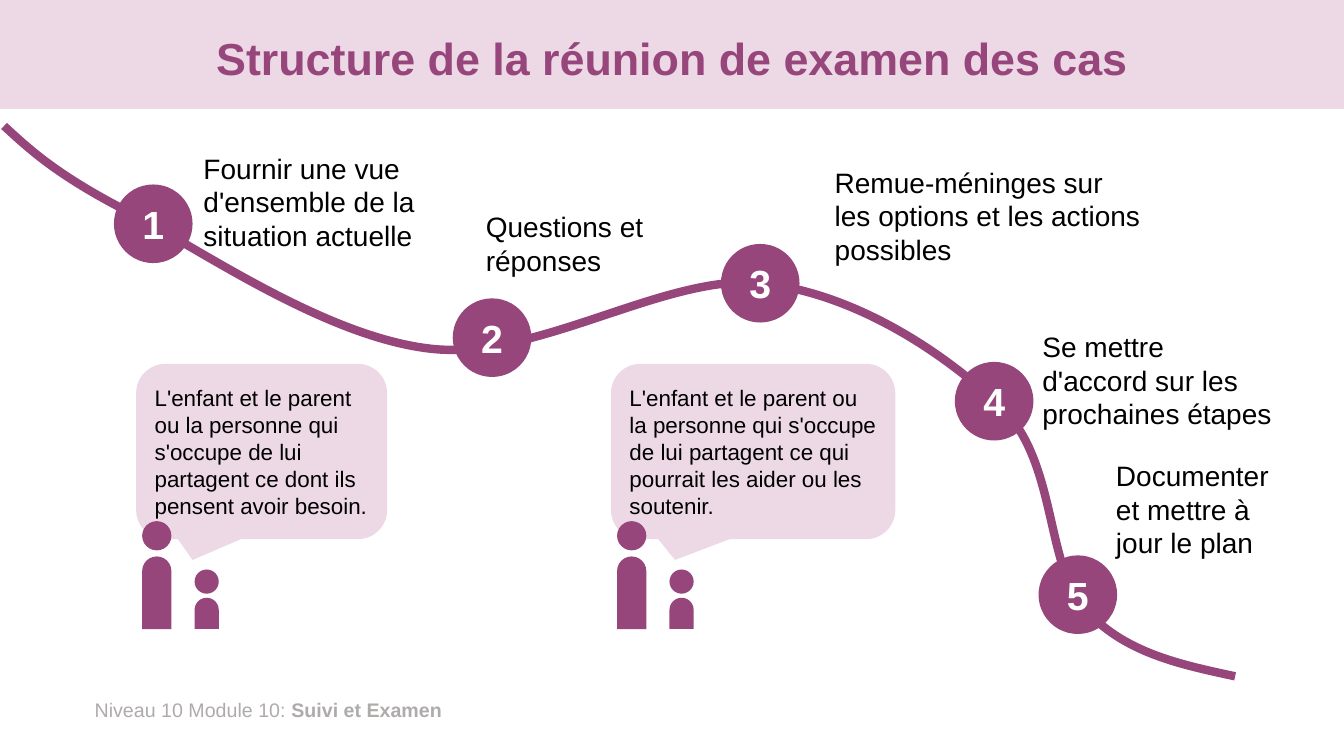
from pptx import Presentation
from pptx import util as u
from pptx.dml.color import RGBColor
from pptx.enum import shapes, text
from pptx.oxml.ns import qn

PX = 9144  # EMU per px, 100 px to the inch
PLUM = RGBColor(0x97, 0x46, 0x7C)
PINK = RGBColor(0xED, 0xD8, 0xE6)
GREY = RGBColor(0xAF, 0xAB, 0xAB)
BLACK = RGBColor(0, 0, 0)
WHITE = RGBColor(255, 255, 255)

SHAPE = shapes.MSO_SHAPE
LEFT, CENTER = text.PP_ALIGN.LEFT, text.PP_ALIGN.CENTER
MIDDLE = text.MSO_ANCHOR.MIDDLE

# Road: start point, then two control points and an end point per curve
ROAD = [(4, 125),
        (30, 149), (57, 174), (127, 210),
        (198, 247), (322, 334), (427, 346),
        (532, 358), (661, 271), (755, 281),
        (850, 291), (941, 353), (995, 406),
        (1048, 460), (1037, 559), (1075, 603),
        (1113, 647), (1169, 659), (1225, 671)]

# Steps: marker position, label box, label
MARKER = 78
STEPS = [
    ((113, 183), (192, 145, 286, 111),
     "Fournir une vue d'ensemble de la situation actuelle"),
    ((449, 296), (472, 203, 251, 77), "Questions et réponses"),
    ((715, 242), (818, 159, 325, 111),
     "Remue-méninges sur les options et les actions possibles"),
    ((947, 359), (1024, 322, 251, 111),
     "Se mettre d'accord sur les prochaines étapes"),
    ((1030, 551), (1097, 450, 186, 111),
     "Documenter et mettre à jour le plan"),
]

# Speech: left edge, width, words
SPEECH = [
    (135, 249, "L'enfant et le parent ou la personne qui s'occupe de lui "
               "partagent ce dont ils pensent avoir besoin."),
    (606, 282, "L'enfant et le parent ou la personne qui s'occupe de lui "
               "partagent ce qui pourrait les aider ou les soutenir."),
]


def emu(*lengths):
    return [length * PX for length in lengths]


def add_shape(parent, kind, box, fill, adjustments=()):
    sp = parent.shapes.add_shape(kind, *emu(*box))
    sp.shadow.inherit = False
    sp.fill.solid()
    sp.fill.fore_color.rgb = fill
    sp.line.fill.background()
    for i, value in enumerate(adjustments):
        sp.adjustments[i] = value
    return sp


def write(sp, words, size, color, bold=None, align=LEFT, anchor=None):
    tf = sp.text_frame
    tf.word_wrap = True
    if anchor is not None:
        tf.vertical_anchor = anchor
    p = tf.paragraphs[0]
    p.text = words
    p.alignment = align
    p.font.name = "Arial"
    p.font.size = u.Pt(size)
    p.font.bold = bold
    p.font.color.rgb = color
    return p


def add_label(s, box, words, size, color, **style):
    return write(s.shapes.add_textbox(*emu(*box)), words, size, color, **style)


def add_road(s, points):
    builder = s.shapes.build_freeform(*points[0], scale=PX)
    builder.add_line_segments(points[1:], close=False)
    sp = builder.convert_to_shape()
    sp.shadow.inherit = False
    sp.fill.background()
    sp.line.color.rgb = PLUM
    sp.line.width = u.Pt(6)
    # Turn each three line segments into one Bézier curve
    outline = sp._element.xpath(".//a:path")[0]
    segments = outline.findall(qn("a:lnTo"))
    for i in range(0, len(segments), 3):
        curve = outline.makeelement(qn("a:cubicBezTo"), {})
        segments[i].addprevious(curve)
        for segment in segments[i:i + 3]:
            curve.append(segment[0])
            outline.remove(segment)


def add_marker(s, position, number):
    sp = add_shape(s, SHAPE.OVAL, (*position, MARKER, MARKER), PLUM)
    write(sp, str(number), 28, WHITE, bold=True, align=CENTER, anchor=MIDDLE)


def add_person(group, x, y, width, body_top, body_height):
    add_shape(group, SHAPE.OVAL, (x, y, width, width), PLUM)
    add_shape(group, SHAPE.ROUND_2_SAME_RECTANGLE,
              (x, body_top, width, body_height), PLUM, (0.5, 0))


def add_speech(s, x, width, words):
    sp = add_shape(s, SHAPE.ROUNDED_RECTANGULAR_CALLOUT,
                   (x, 361, width, 174), PINK, (-0.275, 0.618, 0.167))
    write(sp, words, 16, BLACK, anchor=MIDDLE)
    family = s.shapes.add_group_shape()
    add_person(family, x + 58, 565, 24, 593, 31)
    add_person(family, x + 6, 517, 29, 552, 72)


def main():
    prs = Presentation()
    prs.slide_width, prs.slide_height = u.Inches(13.33), u.Inches(7.5)
    s = prs.slides.add_slide(prs.slide_layouts[6])

    # Title band and footer
    add_shape(s, SHAPE.RECTANGLE, (0, 0, 1333, 108), PINK)
    p = add_label(s, (92, 13, 1150, 95),
                  "Structure de la réunion de examen des cas", 32, PLUM,
                  bold=True, align=CENTER, anchor=MIDDLE)
    p.line_spacing = 0.9
    p = add_label(s, (84, 687, 455, 34), "Niveau 10 Module 10: ", 14, GREY)
    r = p.add_run()
    r.text = "Suivi et Examen"
    r.font.bold = True

    # Road with numbered steps
    add_road(s, ROAD)
    for number, (position, box, words) in enumerate(STEPS, 1):
        add_label(s, box, words, 20, BLACK)
        add_marker(s, position, number)

    # Families and what they say
    for x, width, words in SPEECH:
        add_speech(s, x, width, words)

    prs.save("out.pptx")


if __name__ == "__main__":
    main()
